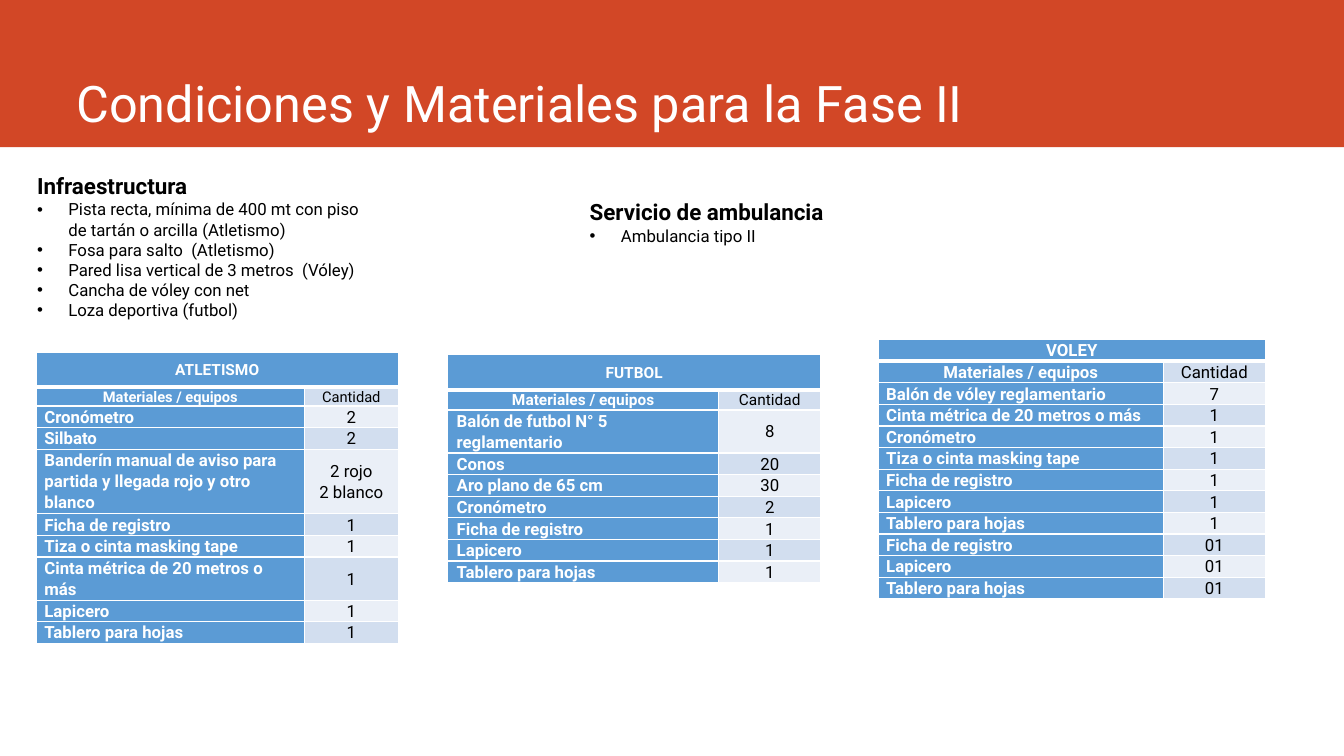
from dataclasses import dataclass

from lxml import etree
from pptx import Presentation
from pptx import util as u
from pptx.dml import color
from pptx.enum import shapes, text
from pptx.oxml import ns


@dataclass(frozen=True)
class Theme:
    font: str = "Roboto"
    banner: str = "D24726"
    white: str = "FFFFFF"
    black: str = "000000"
    blue: str = "5B9BD5"
    bands: tuple = ("D2DEEF", "EAEFF7")
    title: float = 36
    heading: float = 16
    body: float = 12
    small: float = 11
    tiny: float = 10.5
    border: float = 1
    head_border: float = 3


T = Theme()

INFRASTRUCTURE = [
    "Pista recta, mínima de 400 mt con piso de tartán o arcilla (Atletismo)",
    "Fosa para salto  (Atletismo)",
    "Pared lisa vertical de 3 metros  (Vóley)",
    "Cancha de vóley con net",
    "Loza deportiva (futbol)",
]
ATHLETICS = [
    ("Cronómetro", "2"),
    ("Silbato", "2"),
    ("Banderín manual de aviso para partida y llegada rojo y otro blanco", "2 rojo\n2 blanco"),
    ("Ficha de registro", "1"),
    ("Tiza o cinta masking tape", "1"),
    ("Cinta métrica de 20 metros o más", "1"),
    ("Lapicero", "1"),
    ("Tablero para hojas", "1"),
]
FOOTBALL = [
    ("Balón de futbol N° 5 reglamentario", "8"),
    ("Conos", "20"),
    ("Aro plano de 65 cm", "30"),
    ("Cronómetro", "2"),
    ("Ficha de registro", "1"),
    ("Lapicero", "1"),
    ("Tablero para hojas", "1"),
]
VOLLEYBALL = [
    ("Balón de vóley reglamentario", "7"),
    ("Cinta métrica de 20 metros o más", "1"),
    ("Cronómetro", "1"),
    ("Tiza o cinta masking tape", "1"),
    ("Ficha de registro", "1"),
    ("Lapicero", "1"),
    ("Tablero para hojas", "1"),
    ("Ficha de registro", "01"),
    ("Lapicero", "01"),
    ("Tablero para hojas", "01"),
]


def rgb(value):
    return color.RGBColor.from_string(value)


def add_run(p, words, size, ink, bold=False):
    r = p.add_run()
    r.text = words
    r.font.name = T.font
    r.font.size = u.Pt(size)
    r.font.bold = bold
    r.font.color.rgb = rgb(ink)


def add_box(s, box):
    tf = s.shapes.add_textbox(*map(u.Inches, box)).text_frame
    tf.word_wrap = True
    return tf


def add_banner(s, box):
    left, top, width, height = box
    sp = s.shapes.add_shape(shapes.MSO_SHAPE.RECTANGLE, *map(u.Inches, box))
    sp.shadow.inherit = False
    sp.fill.solid()
    sp.fill.fore_color.rgb = rgb(T.banner)
    sp.line.fill.background()
    tf = add_box(s, (left + 0.66, top, width - 1.57, height - 0.14))
    tf.vertical_anchor = text.MSO_ANCHOR.BOTTOM
    tf.margin_bottom = 0
    add_run(tf.paragraphs[0], "Condiciones y Materiales para la Fase II", T.title, T.white)


def add_list(s, box, heading, items):
    tf = add_box(s, box)
    add_run(tf.paragraphs[0], heading, T.heading, T.black, True)
    for item in items:
        p = tf.add_paragraph()
        pPr = p._p.get_or_add_pPr()
        pPr.set("marL", str(u.Inches(0.31)))
        pPr.set("indent", str(-u.Inches(0.31)))
        etree.SubElement(pPr, ns.qn("a:buFont"), typeface="Arial")
        etree.SubElement(pPr, ns.qn("a:buChar"), char="•")
        add_run(p, item, T.body, T.black)


def set_borders(cell, row):
    tcPr = cell._tc.get_or_add_tcPr()
    widths = {
        "L": T.border,
        "R": T.border,
        "T": T.head_border if row == 1 else T.border,
        "B": T.head_border if row == 0 else T.border,
    }
    for side, width in widths.items():
        ln = etree.SubElement(tcPr, ns.qn(f"a:ln{side}"), w=str(u.Pt(width)))
        fill = etree.SubElement(ln, ns.qn("a:solidFill"))
        etree.SubElement(fill, ns.qn("a:srgbClr"), val=T.white)


def fill_cell(cell, words, row, col, size, inset):
    label = row == 0 or col == 0
    set_borders(cell, row)
    cell.fill.solid()
    cell.fill.fore_color.rgb = rgb(T.blue if label else T.bands[(row - 1) % 2])
    cell.vertical_anchor = text.MSO_ANCHOR.MIDDLE
    cell.margin_left = cell.margin_right = u.Inches(inset)
    cell.margin_top = cell.margin_bottom = 0
    tf = cell.text_frame
    for i, line in enumerate(words.split("\n")):
        p = tf.add_paragraph() if i else tf.paragraphs[0]
        p.line_spacing = 1.07
        if row > 1 and col == 0:
            p._p.get_or_add_pPr().set("marL", str(u.Inches(0.02)))
        else:
            p.alignment = text.PP_ALIGN.CENTER
        if line:
            add_run(p, line, size, T.white if label else T.black, label)


def add_materials(s, box, sport, items, quantity_width, head_height, head_sizes, inset):
    rows = [(sport, ""), ("Materiales / equipos", "Cantidad"), *items]
    frame = s.shapes.add_table(len(rows), 2, *map(u.Inches, box))
    table = frame.table
    table.columns[0].width = u.Inches(box[2] - quantity_width)
    table.columns[1].width = u.Inches(quantity_width)
    sizes = [*head_sizes, *[T.body] * len(items)]
    for i, (row, size) in enumerate(zip(rows, sizes)):
        table.rows[i].height = u.Inches(0.15 if i else head_height)
        for j, words in enumerate(row):
            fill_cell(table.cell(i, j), words, i, j, size, inset)
    table.cell(0, 0).merge(table.cell(0, 1))
    frame.height = u.Inches(box[3])


def main():
    prs = Presentation()
    prs.slide_width, prs.slide_height = u.Inches(13.33), u.Inches(7.5)
    s = prs.slides.add_slide(prs.slide_layouts[6])
    add_banner(s, (0, 0, 13.33, 1.46))
    add_materials(s, (0.36, 3.5, 3.59, 2.78), "ATLETISMO", ATHLETICS,
                  0.93, 0.34, (T.small, T.tiny), 0.06)
    add_materials(s, (4.44, 3.52, 3.7, 2.17), "FUTBOL", FOOTBALL,
                  1.01, 0.35, (T.small, T.small), 0.07)
    add_materials(s, (8.71, 3.37, 3.84, 2.44), "VOLEY", VOLLEYBALL,
                  1.01, 0.15, (T.body, T.body), 0.06)
    add_list(s, (0.27, 1.66, 3.5, 1.58), "Infraestructura", INFRASTRUCTURE)
    add_list(s, (5.75, 1.92, 4.09, 0.57), "Servicio de ambulancia", ["Ambulancia tipo II"])
    prs.save("out.pptx")


if __name__ == "__main__":
    main()
